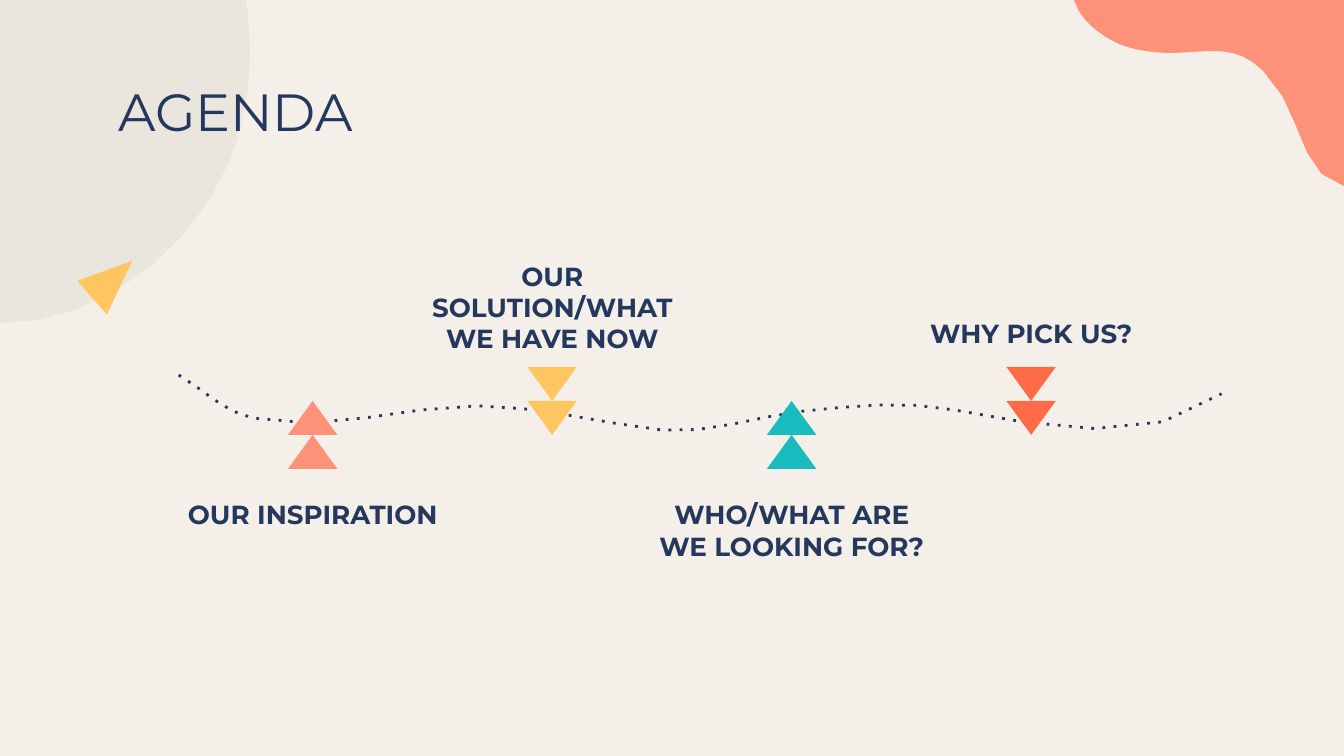
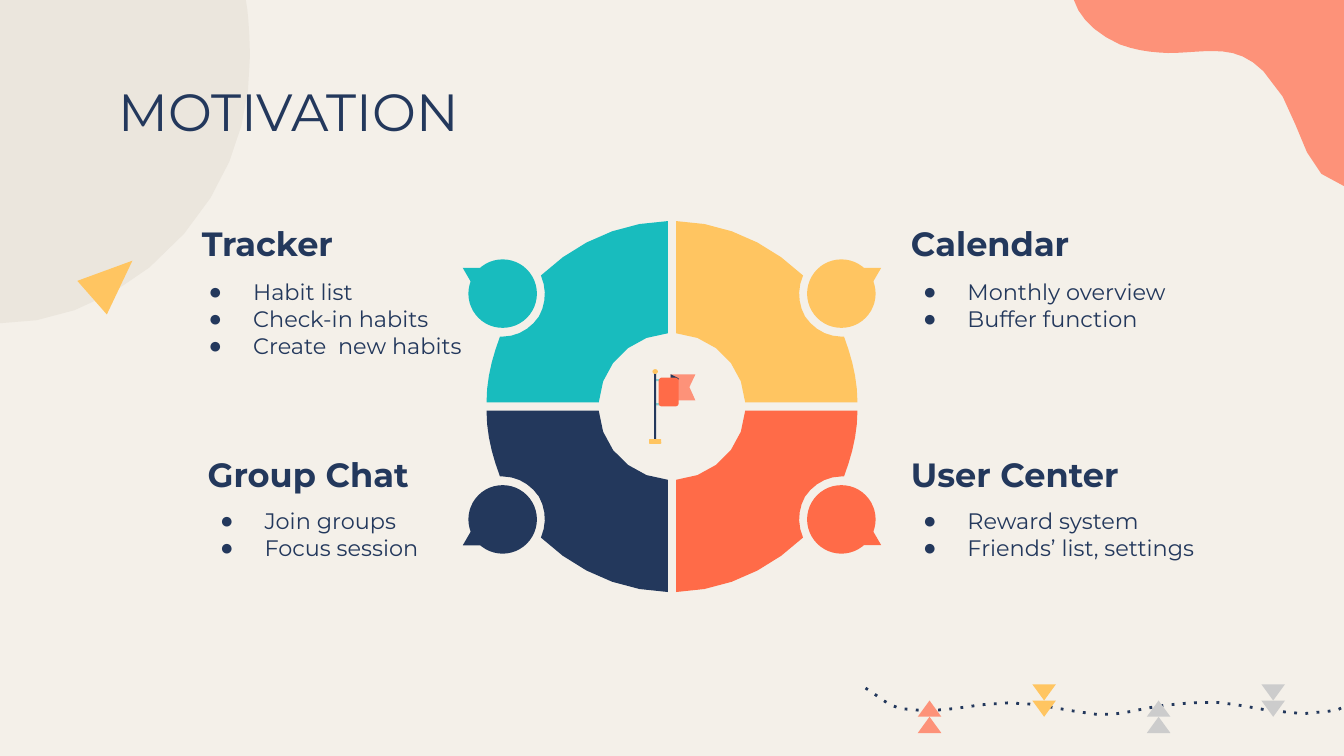
"""Builds the agenda and motivation slides on a grid of 100 columns of square cells."""
import dataclasses

import lxml.etree
import pptx
import pptx.dml.color
import pptx.enum.dml
import pptx.enum.shapes
import pptx.enum.text
import pptx.oxml.ns
import pptx.util

KIND = pptx.enum.shapes.MSO_SHAPE
ALIGN = pptx.enum.text.PP_ALIGN
ANCHOR = pptx.enum.text.MSO_ANCHOR
QN = pptx.oxml.ns.qn


@dataclasses.dataclass(frozen=True)
class Theme:
    font: str = "Montserrat"
    dot: str = "Arial"
    paper: str = "F4F0E9"
    shade: str = "EBE6DD"
    navy: str = "23385C"
    coral: str = "FD9279"
    gold: str = "FFC561"
    teal: str = "18BCBE"
    red: str = "FF6B48"
    mist: str = "87D5D6"
    grey: str = "CCCCCC"
    title: int = 28
    head: int = 18
    label: int = 14
    body: int = 12
    line: float = 1.5


DISC = [(18.3, 0), (18.5, 1, 18.6, 3.1, 18.6, 4.2),
        (18.6, 8.3, 17.5, 13, 13.7, 17.4), (9.6, 22.1, 4.4, 24.1, 0, 24.05)]
BLOB = [(100, 13.85), (96.5, 13.1, 97, 8.1, 94, 5.3), (92.7, 4, 91.5, 3.8, 90.2, 3.8),
        (89.2, 3.8, 88.1, 3.95, 86.9, 3.95), (85.8, 3.9, 84.6, 3.8, 83.3, 3.3),
        (81.5, 2.5, 80.3, 1.3, 79.9, 0), (100, 0)]
DART = [(9.85, 19.4), (5.75, 20.9), (7.95, 23.4)]
TRAIL = [(0, 0), (1.9, 1.1, 3.4, 2.8, 5.5, 3.2), (11, 4.4, 16.6, 2.3, 22.2, 2.3),
         (26.8, 2.3, 31.4, 3.6, 36, 4.1), (39.5, 4.4, 42.9, 3.1, 46.4, 2.7),
         (50.2, 2.3, 54, 1.9, 57.7, 2.6), (64.2, 3.8, 72.4, 5.5, 77.6, 1.4)]
PETAL = [(0.3, -13.8), (0.3, -5.45), (3.1, -5.25, 5.3, -3.05, 5.45, -0.3), (13.8, -0.3),
         (13.8, -2, 13.4, -3.6, 12.8, -5.2), (12.6, -5.2),
         (11.5, -5.2, 10.5, -5.8, 9.9, -6.7), (9.4, -7.6, 9.3, -8.7, 9.75, -9.75),
         (7.2, -12.2, 3.9, -13.7, 0.3, -13.8)]
PENNANT = [(49.9, 27.85), (51.75, 27.85), (51.3, 28.8), (51.75, 29.8), (49.9, 29.8)]
FOLD = [(49.9, 27.85), (50.5, 28.15), (50.5, 28.25), (49.9, 28.25)]


def trace(path, count):
    spots = [path[0]]
    for step in path[1:]:
        if len(step) == 2:
            spots.append(step)
            continue
        ends = list(zip((*spots[-1], *step)[::2], (*spots[-1], *step)[1::2]))
        for turn in range(1, count + 1):
            t = turn / count
            parts = ((1 - t) ** 3, 3 * t * (1 - t) ** 2, 3 * t * t * (1 - t), t ** 3)
            spots.append(tuple(sum(p * end[axis] for p, end in zip(parts, ends))
                               for axis in (0, 1)))
    return spots


def dress(thing, **form):
    for name, value in form.items():
        setattr(thing, name, value)


def tint(code):
    return pptx.dml.color.RGBColor.from_string(code)


class Deck:
    def __init__(self, theme):
        self.theme = theme
        self.deck = pptx.Presentation()
        wide = pptx.util.Inches(10)
        dress(self.deck, slide_width=wide, slide_height=wide * 9 // 16)
        self.cell = wide // 100
        self.slide = None
        self.paint(self.deck.slide_master.background, theme.paper)

    def size(self, *cells):
        return [round(cell * self.cell) for cell in cells]

    def paint(self, thing, hue):
        thing.fill.solid()
        thing.fill.fore_color.rgb = tint(hue)

    def plain(self, shape, hue):
        self.paint(shape, hue)
        shape.line.fill.background()
        shape.shadow.inherit = False

    def start(self, title):
        self.slide = self.deck.slides.add_slide(self.deck.slide_layouts[5])
        self.patch([*DISC, (0, 0)], self.theme.shade)
        self.patch(BLOB, self.theme.coral)
        self.patch(DART, self.theme.gold)
        head = self.slide.shapes.title
        self.slide.shapes.element.append(head.element)
        self.fill(head, (7.8, 4.9, 74.2, 6.3), [title], self.theme.title)

    def fill(self, shape, box, lines, points, bold=False, align=ALIGN.LEFT,
             anchor=ANCHOR.TOP, after=0, bullet=False):
        dress(shape, **dict(zip(("left", "top", "width", "height"), self.size(*box))))
        frame, inset = shape.text_frame, self.cell
        frame.text = "\n".join(lines)
        dress(frame, word_wrap=True, auto_size=pptx.enum.text.MSO_AUTO_SIZE.NONE,
              vertical_anchor=anchor, margin_left=inset, margin_right=inset,
              margin_top=inset, margin_bottom=inset)
        for para in frame.paragraphs:
            dress(para, alignment=align, space_before=pptx.util.Pt(0),
                  space_after=pptx.util.Pt(after))
            font = para.runs[0].font
            dress(font, name=self.theme.font, size=pptx.util.Pt(points), bold=bold)
            font.color.rgb = tint(self.theme.navy)
            if bullet:
                self.bullet(para)

    def bullet(self, para):
        props = para._p.get_or_add_pPr()
        for name, value in zip(("marL", "indent"), self.size(5, -3.3)):
            props.set(name, str(value))
        color = lxml.etree.SubElement(props, QN("a:buClr"))
        lxml.etree.SubElement(color, QN("a:srgbClr"), val=self.theme.navy)
        lxml.etree.SubElement(props, QN("a:buFont"), typeface=self.theme.dot)
        lxml.etree.SubElement(props, QN("a:buChar"), char="●")

    def text(self, box, lines, points, **form):
        shape = self.slide.shapes.add_textbox(*self.size(*box))
        self.fill(shape, box, lines, points, **form)

    def shape(self, kind, box, hue, turn=0):
        shape = self.slide.shapes.add_shape(kind, *self.size(*box))
        self.plain(shape, hue)
        shape.rotation = turn

    def outline(self, spots, close):
        spots = [self.size(*spot) for spot in spots]
        pen = self.slide.shapes.build_freeform(*spots[0])
        pen.add_line_segments(spots[1:], close=close)
        return pen.convert_to_shape()

    def patch(self, path, hue, left=0, top=0, across=1, down=1):
        spots = [(left + across * x, top + down * y) for x, y in trace(path, 5)]
        self.plain(self.outline(spots, True), hue)

    def trail(self, left, top, scale, hues):
        spots = [(left + scale * x, top + scale * y) for x, y in trace(TRAIL, 4)]
        shape = self.outline(spots, False)
        shape.fill.background()
        shape.shadow.inherit = False
        dress(shape.line, width=pptx.util.Pt(self.theme.line),
              dash_style=pptx.enum.dml.MSO_LINE.ROUND_DOT)
        shape.line.color.rgb = tint(self.theme.navy)
        shape.element.spPr.find(".//" + QN("a:prstDash")).set("val", "dot")
        high = 2.53 * scale
        for place, hue in enumerate(hues):
            x, y = left + scale * (8.12 + 17.82 * place), top + 1.93 * scale
            down = place % 2
            for edge in (y, y - high if down else y + high):
                self.shape(KIND.ISOSCELES_TRIANGLE, (x, edge, 3.68 * scale, high),
                           hue, 180 * down)

    def wheel(self, x, y, hues):
        for (across, down), hue in hues.items():
            self.patch(PETAL, hue, x, y, across, -down)
            self.shape(KIND.OVAL, (x + 12.6 * across - 2.55, y + 8.4 * down - 2.55, 5.1, 5.1), hue)
            self.shape(KIND.ISOSCELES_TRIANGLE,
                       (x + 14.7 * across - 1.15, y + 9.82 * down - 1, 2.3, 2),
                       hue, across * (90 + 30 * down) % 360)

    def flag(self):
        look = self.theme
        self.patch(PENNANT, look.coral)
        self.patch(FOLD, look.navy)
        for top in (28.2, 30):
            self.shape(KIND.RECTANGLE, (48.7, top, 0.4, 0.16), look.mist)
        self.shape(KIND.ROUNDED_RECTANGLE, (49, 28.1, 1.5, 2.15), look.red)
        self.shape(KIND.RECTANGLE, (48.67, 27.7, 0.16, 5.1), look.navy)
        self.shape(KIND.ROUNDED_RECTANGLE, (48.3, 32.67, 0.9, 0.36), look.gold)
        self.shape(KIND.OVAL, (48.55, 27.47, 0.4, 0.36), look.gold)


def agenda(deck):
    look = deck.theme
    deck.start("AGENDA")
    deck.trail(13.3, 27.9, 1, (look.coral, look.gold, look.teal, look.red))
    steps = [("OUR INSPIRATION", 36.1, 8.6), ("OUR SOLUTION/WHAT WE HAVE NOW", 18.35, 7.2),
             ("WHO/WHAT ARE WE LOOKING FOR?", 36.1, 8.6), ("WHY PICK US?", 22.6, 7.2)]
    for place, (words, top, high) in enumerate(steps):
        deck.text((11.93 + 17.82 * place, top, 22.7, high), [words], look.label,
                  bold=True, align=ALIGN.CENTER, after=16)


def drive(deck):
    look = deck.theme
    deck.start("MOTIVATION")
    deck.wheel(50, 30.25, {(-1, 1): look.navy, (1, 1): look.red,
                           (1, -1): look.gold, (-1, -1): look.teal})
    topics = [
        ("Tracker", 8.4, 15.65, ALIGN.CENTER, 12.85, 19.7, 23,
         ["Habit list", "Check-in habits", "Create  new habits"]),
        ("Calendar", 66.8, 15.65, ALIGN.LEFT, 66, 19.7, 24.2,
         ["Monthly overview", "Buffer function"]),
        ("Group Chat", 8.4, 32.85, ALIGN.RIGHT, 13.7, 36.75, 23,
         ["Join groups", "Focus session"]),
        ("User Center", 66.8, 32.85, ALIGN.LEFT, 66, 36.75, 27.1,
         ["Reward system", "Friends’ list, settings"]),
    ]
    for name, left, top, align, inner, below, wide, points in topics:
        deck.text((left, top, 23, 4.9), [name], look.head, bold=True,
                  align=align, anchor=ANCHOR.BOTTOM)
        deck.text((inner, below, wide, 8.6), points, look.body, bullet=True)
    deck.flag()
    deck.trail(64.4, 51.2, 11 / 23, (look.coral, look.gold, look.grey, look.grey))


def main():
    deck = Deck(Theme())
    agenda(deck)
    drive(deck)
    deck.deck.save("out.pptx")


if __name__ == "__main__":
    main()
